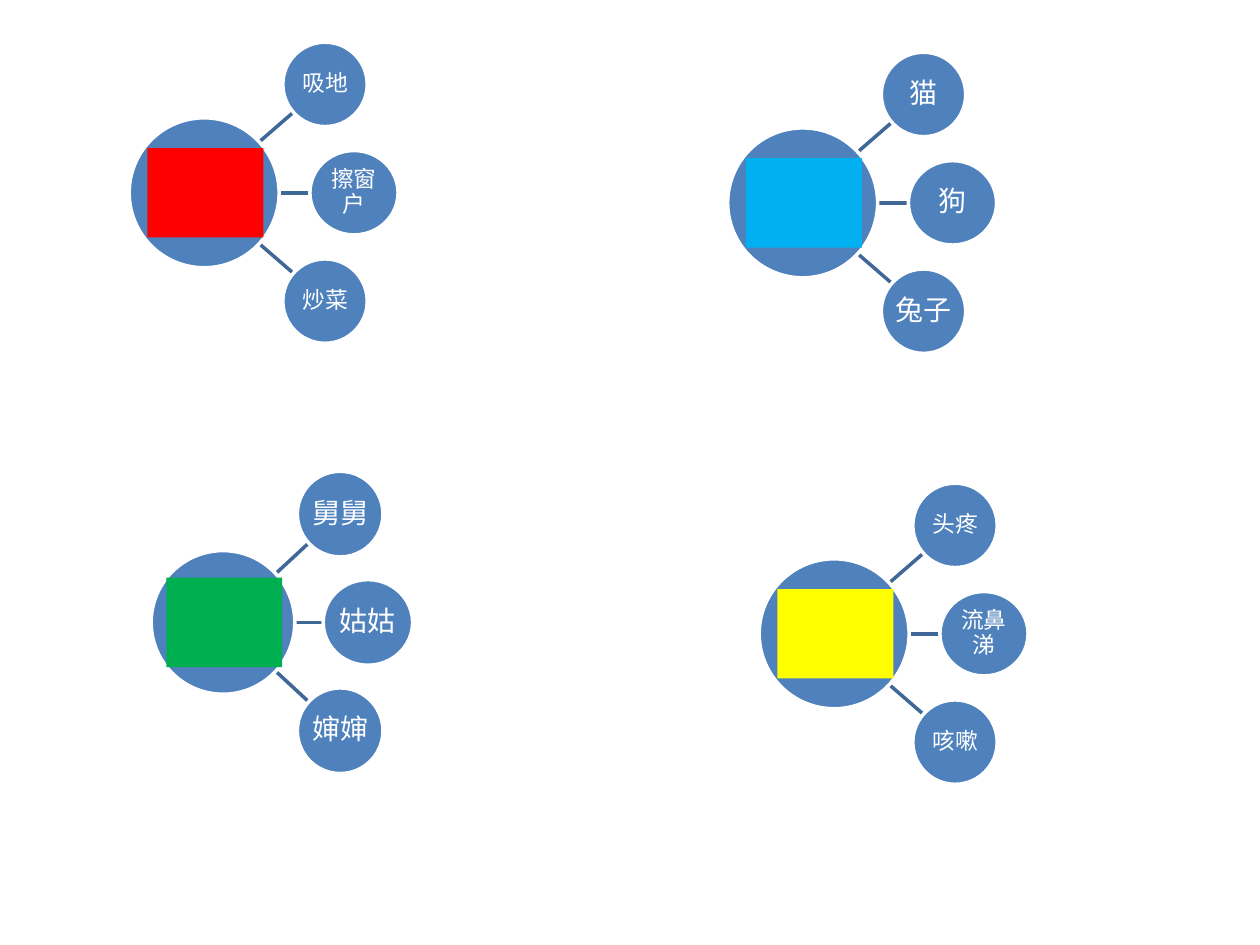
from dataclasses import dataclass

from lxml.etree import SubElement
from pptx import Presentation
from pptx.dml.color import RGBColor
from pptx.enum.shapes import MSO_CONNECTOR as Connector, MSO_SHAPE as Shape
from pptx.enum.text import MSO_ANCHOR as Anchor, PP_ALIGN as Align
from pptx.oxml.ns import qn
from pptx.util import Inches, Pt

BLUE = RGBColor(0x4F, 0x81, 0xBD)
SPOKE_BLUE = RGBColor(0x3F, 0x67, 0x97)
WHITE = RGBColor(0xFF, 0xFF, 0xFF)
RED = RGBColor(0xFF, 0x00, 0x00)
SKY = RGBColor(0x00, 0xB0, 0xF0)
GREEN = RGBColor(0x00, 0xB0, 0x50)
YELLOW = RGBColor(0xFF, 0xFF, 0x00)


@dataclass
class Geometry:
    hub: float
    word_height: float
    word_width: float
    side_reach: tuple
    middle_reach: float
    side_spoke: tuple
    middle_spoke: tuple


WIDE = Geometry(1.19, 0.67, 0.7, (0.96, 0.86), 1.19,
                ((0.41, 0.38), (0.71, 0.64)), (0.41, 0.84))
COMPACT = Geometry(1.14, 0.68, 0.71, (0.93, 0.86), 1.15,
                   ((0.4, 0.37), (0.68, 0.63)), (0.4, 0.8))

CLUSTERS = [
    ((1.62, 1.53), WIDE, RED, 13, ("吸地", "擦窗户", "炒菜")),
    ((6.37, 1.61), WIDE, SKY, 16, ("猫", "狗", "兔子")),
    ((1.77, 4.94), COMPACT, GREEN, 16, ("舅舅", "姑姑", "婶婶")),
    ((6.62, 5.03), WIDE, YELLOW, 13, ("头疼", "流鼻涕", "咳嗽")),
]


class WordWeb:
    font = "Calibri"
    line_width = Pt(2)
    inset = Inches(0.01)
    card_size = (0.92, 0.71)

    def __init__(self, slide):
        self.slide = slide

    def centred(self, kind, x, y, width, height, fill):
        shape = self.slide.shapes.add_shape(
            kind, Inches(x - width / 2), Inches(y - height / 2),
            Inches(width), Inches(height))
        shape.shadow.inherit = False
        shape.fill.solid()
        shape.fill.fore_color.rgb = fill
        shape.line.fill.background()
        return shape

    def circle(self, x, y, width, height):
        circle = self.centred(Shape.OVAL, x, y, width, height, BLUE)
        circle.line.color.rgb = WHITE
        circle.line.width = self.line_width
        return circle

    def word(self, x, y, width, height, label, size):
        frame = self.circle(x, y, width, height).text_frame
        frame.word_wrap = True
        frame.vertical_anchor = Anchor.MIDDLE
        frame.margin_left = frame.margin_right = self.inset
        frame.margin_top = frame.margin_bottom = self.inset
        paragraph = frame.paragraphs[0]
        paragraph.alignment = Align.CENTER
        paragraph.line_spacing = 0.9
        run = paragraph.add_run()
        run.text = label
        run.font.name = self.font
        run.font.size = Pt(size)
        run.font.color.rgb = WHITE

    def spoke(self, start, end):
        spoke = self.slide.shapes.add_connector(
            Connector.STRAIGHT, *(Inches(value) for value in (*start, *end)))
        spoke.line.color.rgb = SPOKE_BLUE
        spoke.line.width = self.line_width
        SubElement(spoke._element.spPr, qn("a:effectLst"))

    def card(self, x, y, fill):
        self.centred(Shape.RECTANGLE, x, y, *self.card_size, fill)

    def cluster(self, centre, geometry, colour, size, labels):
        x, y = centre
        for side in (1, 0, -1):
            if side:
                start, end = geometry.side_spoke
            else:
                start, end = ((reach, 0) for reach in geometry.middle_spoke)
            self.spoke((x + start[0], y + side * start[1]),
                       (x + end[0], y + side * end[1]))
        self.circle(x, y, geometry.hub, geometry.hub)
        for side, label in zip((-1, 0, 1), labels):
            reach = geometry.side_reach[0] if side else geometry.middle_reach
            width = geometry.word_height if side else geometry.word_width
            self.word(x + reach, y + side * geometry.side_reach[1],
                      width, geometry.word_height, label, size)
        self.card(x + 0.01, y, colour)


def main():
    deck = Presentation()
    deck.slide_width, deck.slide_height = Inches(10), Inches(7.5)
    web = WordWeb(deck.slides.add_slide(deck.slide_layouts[6]))
    for cluster in CLUSTERS:
        web.cluster(*cluster)
    deck.save("out.pptx")


if __name__ == "__main__":
    main()
